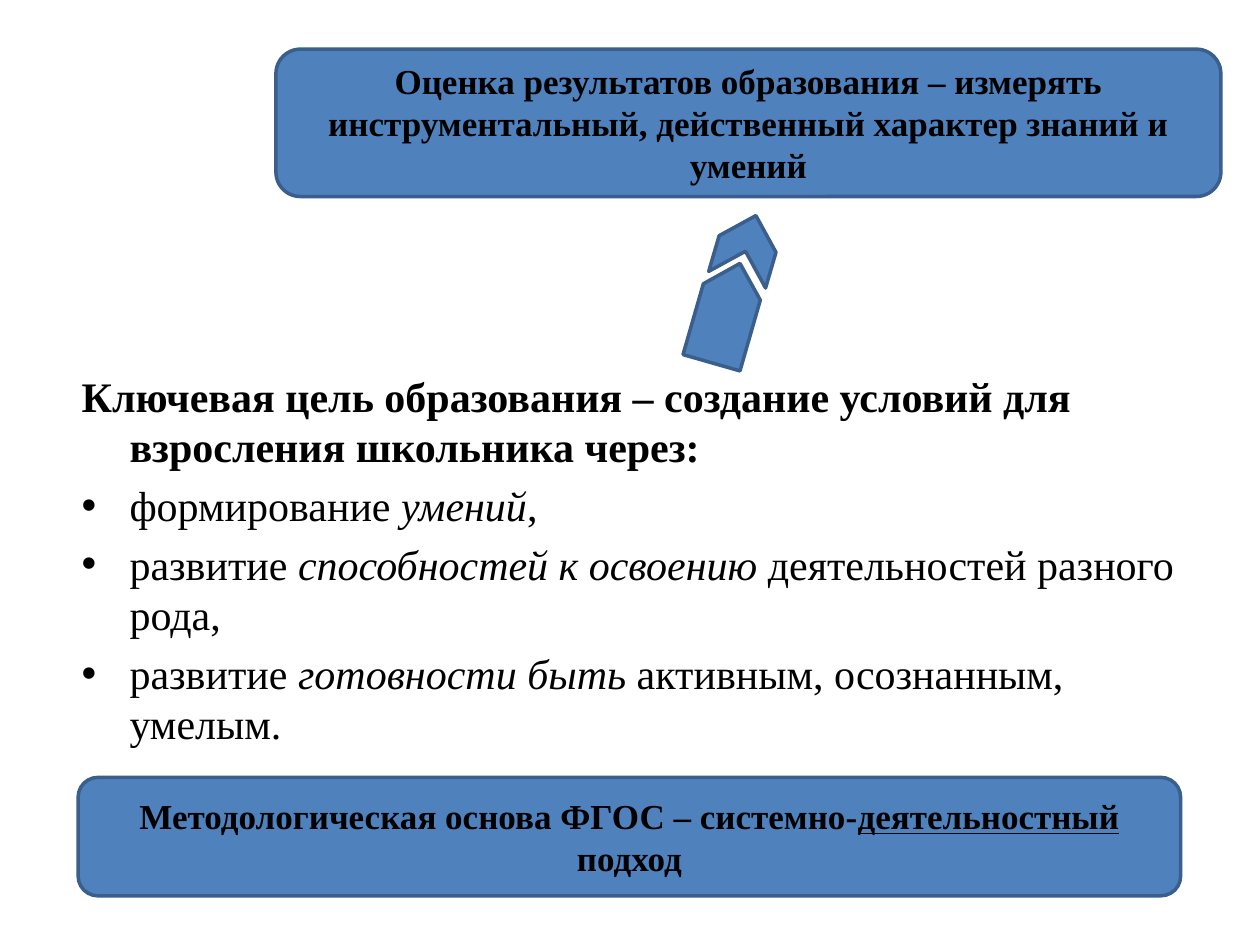
from lxml.etree import SubElement
from pptx import Presentation
from pptx.dml.color import RGBColor
from pptx.enum.shapes import MSO_SHAPE
from pptx.enum.text import MSO_ANCHOR, PP_ALIGN
from pptx.oxml.ns import qn
from pptx.util import Inches, Pt

FONT = "Times New Roman"
BLACK, BLUE, NAVY = "000000", "4F81BD", "3A5F8C"
HANGING = Inches(0.38)

GOAL = [("Ключевая цель образования – создание условий для взросления школьника через:", "b")]
MEANS = [
    [("формирование ", ""), ("умений", "i"), (",", "")],
    [("развитие ", ""), ("способностей к освоению", "i"), (" деятельностей разного рода,", "")],
    [("развитие ", ""), ("готовности быть", "i"), (" активным, осознанным, умелым.", "")],
]
BANNERS = [
    ((0.62, 6.17, 8.75, 0.94), [
        ("Методологическая основа ФГОС – системно-", "b"),
        ("деятельностный", "bu"),
        (" подход", "b"),
    ]),
    ((2.19, 0.39, 7.5, 1.17), [
        ("Оценка результатов образования – измерять инструментальный, "
         "действенный характер знаний и умений", "b"),
    ]),
]
ARROW_PARTS = [
    (MSO_SHAPE.PENTAGON, (5.35, 2.25, 0.82, 0.47), 286),
    (MSO_SHAPE.CHEVRON, (5.66, 1.73, 0.53, 0.47), 286.3),
]


def color(value):
    return RGBColor.from_string(value)


def add_runs(paragraph, parts, size):
    for text, style in parts:
        run = paragraph.add_run()
        run.text = text
        font = run.font
        font.name, font.size = FONT, Pt(size)
        font.color.rgb = color(BLACK)
        font.bold, font.italic, font.underline = ("b" in style, "i" in style, "u" in style)


def add_block(slide, preset, box):
    block = slide.shapes.add_shape(preset, *map(Inches, box))
    block.shadow.inherit = False
    block.fill.solid()
    block.fill.fore_color.rgb = color(BLUE)
    block.line.color.rgb = color(NAVY)
    block.line.width = Pt(2)
    return block


def set_hanging(paragraph, bulleted):
    paragraph.space_before = Pt(4.8)
    properties = paragraph._p.get_or_add_pPr()
    properties.set("marL", str(HANGING))
    properties.set("indent", str(-HANGING))
    if bulleted:
        SubElement(properties, qn("a:buFont"), typeface="Arial")
        SubElement(properties, qn("a:buChar"), char="•")
    else:
        SubElement(properties, qn("a:buNone"))


def main():
    deck = Presentation()
    deck.slide_width, deck.slide_height = Inches(10), Inches(7.5)
    slide = deck.slides.add_slide(deck.slide_layouts[6])

    body = slide.shapes.add_textbox(*map(Inches, (0.55, 2.89, 9, 2.73))).text_frame
    body.word_wrap = True
    for index, parts in enumerate([GOAL] + MEANS):
        paragraph = body.add_paragraph() if index else body.paragraphs[0]
        set_hanging(paragraph, bulleted=index > 0)
        add_runs(paragraph, parts, 24)

    for box, parts in BANNERS:
        banner = add_block(slide, MSO_SHAPE.ROUNDED_RECTANGLE, box).text_frame
        banner.word_wrap = True
        banner.vertical_anchor = MSO_ANCHOR.MIDDLE
        banner.paragraphs[0].alignment = PP_ALIGN.CENTER
        add_runs(banner.paragraphs[0], parts, 20)

    for preset, box, angle in ARROW_PARTS:
        add_block(slide, preset, box).rotation = angle

    deck.save("out.pptx")


if __name__ == "__main__":
    main()
